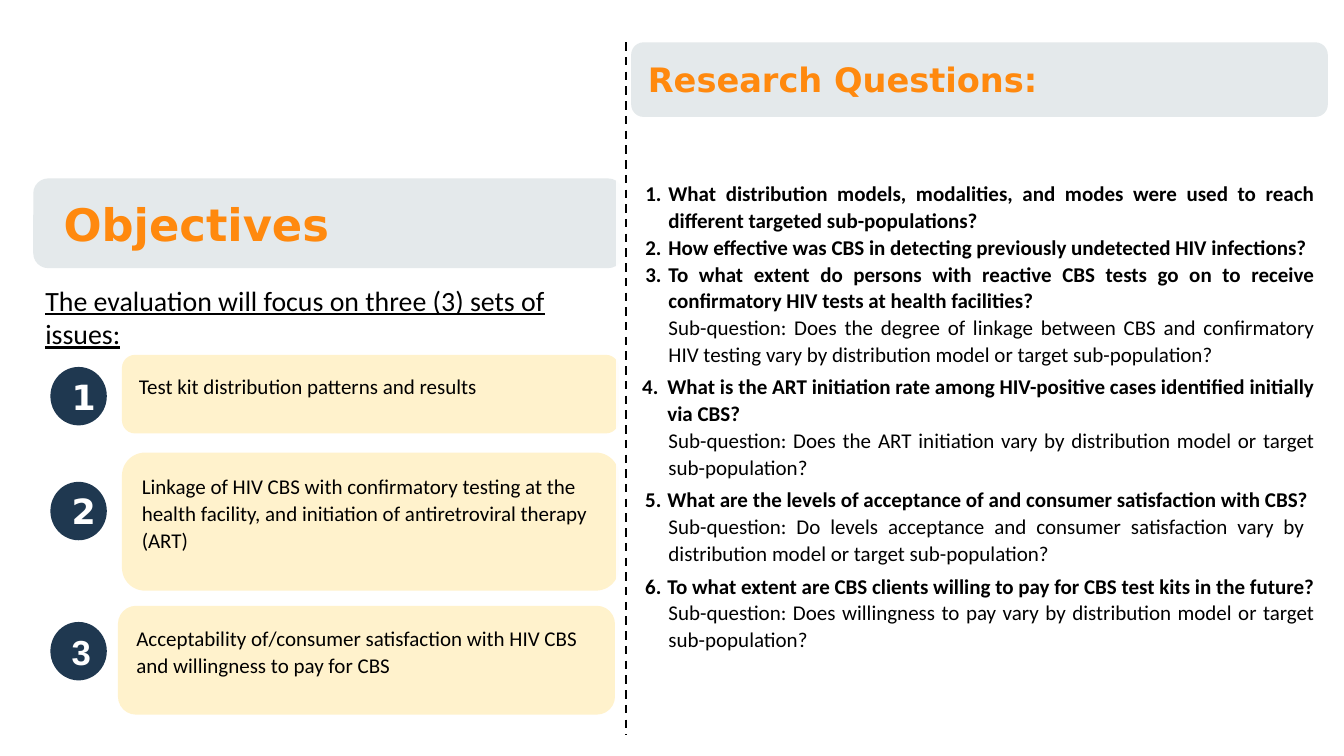
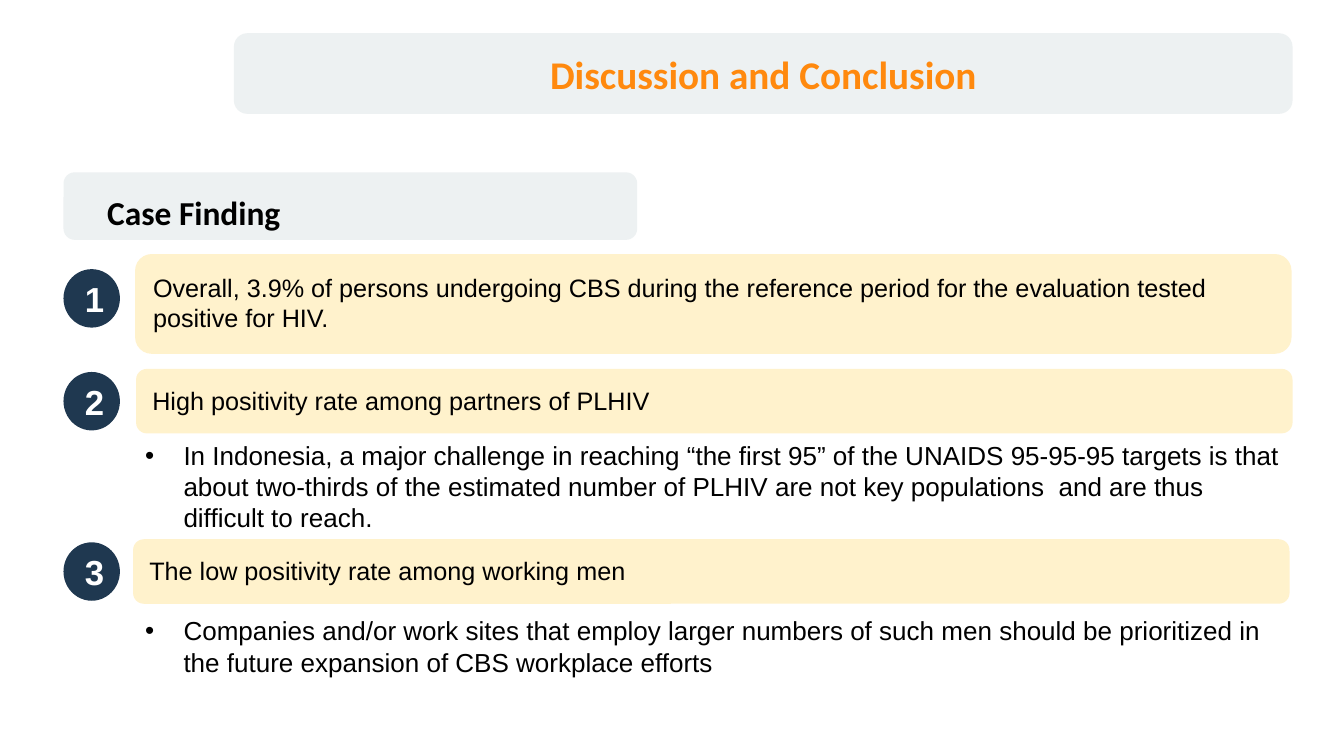
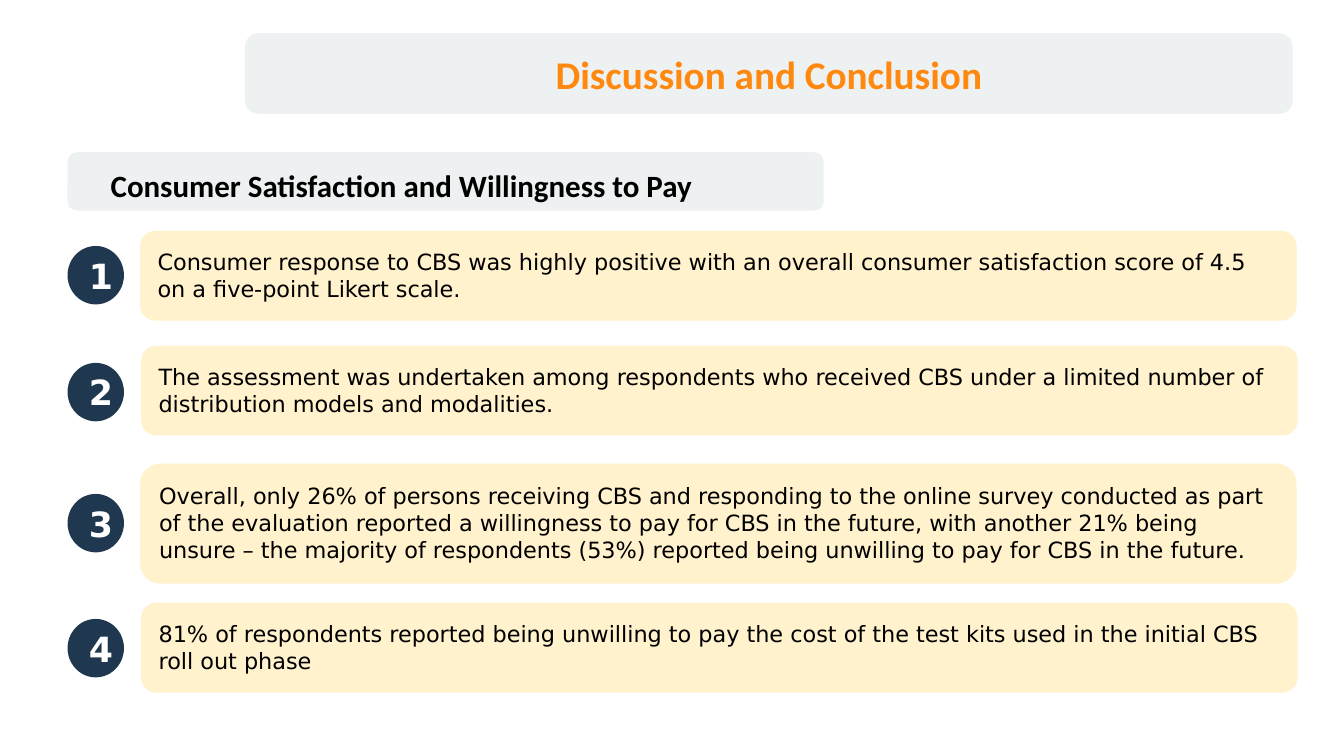
from lxml import etree
from pptx import Presentation
from pptx.dml.color import RGBColor
from pptx.enum.dml import MSO_LINE
from pptx.enum.shapes import MSO_CONNECTOR, MSO_SHAPE
from pptx.enum.text import MSO_ANCHOR, MSO_AUTO_SIZE, PP_ALIGN
from pptx.oxml.ns import qn
from pptx.util import Inches, Pt

ORANGE = RGBColor(0xFF, 0x89, 0x0E)
NAVY = RGBColor(0x1F, 0x38, 0x50)
CREAM = RGBColor(0xFF, 0xF2, 0xCC)
GREY = RGBColor(0xE4, 0xE9, 0xEB)
LIGHT_GREY = RGBColor(0xED, 0xF1, 0xF2)
WHITE = RGBColor(0xFF, 0xFF, 0xFF)
BLACK = RGBColor(0, 0, 0)

SANS = "DejaVu Sans"
CALIBRI = "Calibri"
ARIAL = "Arial"

LEFT, CENTER, JUSTIFY = PP_ALIGN.LEFT, PP_ALIGN.CENTER, PP_ALIGN.JUSTIFY
TOP, MIDDLE, BOTTOM = MSO_ANCHOR.TOP, MSO_ANCHOR.MIDDLE, MSO_ANCHOR.BOTTOM
ROUNDED, OVAL = MSO_SHAPE.ROUNDED_RECTANGLE, MSO_SHAPE.OVAL
STRAIGHT, DASH = MSO_CONNECTOR.STRAIGHT, MSO_LINE.DASH
NO_AUTOFIT = MSO_AUTO_SIZE.NONE

TITLE_ONLY, TITLE_AND_BODY, TITLE_AND_TWO_BODIES = 5, 1, 3
INSET = 0.13

QUESTIONS = [
    ("What distribution models, modalities, and modes were used to reach different targeted sub-populations?", None),
    ("How effective was CBS in detecting previously undetected HIV infections?", None),
    ("To what extent do persons with reactive CBS tests go on to receive confirmatory HIV tests at health facilities?",
     "Sub-question: Does the degree of linkage between CBS and confirmatory HIV testing vary by distribution model "
     "or target sub-population?"),
    ("What is the ART initiation rate among HIV-positive cases identified initially via CBS?",
     "Sub-question: Does the ART initiation vary by distribution model or target sub-population?"),
    ("What are the levels of acceptance of and consumer satisfaction with CBS?",
     "Sub-question: Do levels acceptance and consumer satisfaction vary by  distribution model or target "
     "sub-population?"),
    ("To what extent are CBS clients willing to pay for CBS test kits in the future?",
     "Sub-question: Does willingness to pay vary by distribution model or target sub-population?"),
]


def place(shape, box):
    """Move a shape to a box of left, top, width and height in inches."""
    shape.left, shape.top, shape.width, shape.height = map(Inches, box)


def set_frame(shape, anchor=TOP, inset=INSET, left_inset=None):
    """Set wrapping, anchor and margins, and return the text frame."""
    frame = shape.text_frame
    frame.word_wrap = True
    frame.auto_size = NO_AUTOFIT
    frame.vertical_anchor = anchor
    frame.margin_left = Inches(inset if left_inset is None else left_inset)
    frame.margin_right = frame.margin_top = frame.margin_bottom = Inches(inset)
    return frame


def set_list_mark(paragraph, bullet, number, indent):
    """Give a paragraph its indent and its bullet, number or no mark."""
    properties = paragraph._p.get_or_add_pPr()
    left, first = indent
    properties.set("marL", str(Inches(left)))
    properties.set("indent", str(Inches(first)))
    if not bullet and not number:
        etree.SubElement(properties, qn("a:buNone"))
        return
    color = etree.SubElement(properties, qn("a:buClr"))
    etree.SubElement(color, qn("a:srgbClr")).set("val", str(BLACK))
    etree.SubElement(properties, qn("a:buFont")).set("typeface", ARIAL if bullet else CALIBRI)
    if bullet:
        etree.SubElement(properties, qn("a:buChar")).set("char", bullet)
    else:
        mark = etree.SubElement(properties, qn("a:buAutoNum"))
        mark.set("type", "arabicPeriod")
        if number > 1:
            mark.set("startAt", str(number))


def write(frame, text, size=16, font=CALIBRI, color=BLACK, bold=False, underline=False, alignment=LEFT,
          line_spacing=1.0, space_before=0, bullet=None, number=None, indent=(0, 0)):
    """Write one formatted paragraph into a text frame."""
    paragraph = frame.paragraphs[0]
    if paragraph.runs:
        paragraph = frame.add_paragraph()
    set_list_mark(paragraph, bullet, number, indent)
    paragraph.alignment = alignment
    paragraph.line_spacing = line_spacing
    paragraph.space_before = Pt(space_before)
    paragraph.space_after = Pt(0)
    run = paragraph.add_run()
    run.text = text
    run.font.size = Pt(size)
    run.font.name = font
    run.font.bold = bold
    run.font.underline = underline
    run.font.color.rgb = color


def add_filled(slide, kind, box, fill):
    """Add a flat shape without an outline."""
    shape = slide.shapes.add_shape(kind, *map(Inches, box))
    shape.shadow.inherit = False
    shape.fill.solid()
    shape.fill.fore_color.rgb = fill
    shape.line.fill.background()
    return shape


def bring_to_front(slide, shape):
    """Put a shape above everything added so far."""
    slide.shapes._spTree.append(shape._element)


def add_title(slide, text, box, fill=LIGHT_GREY, left_inset=0.1, **text_format):
    """Set the slide title over a rounded band."""
    add_filled(slide, ROUNDED, box, fill)
    title = slide.shapes.title
    place(title, box)
    bring_to_front(slide, title)
    write(set_frame(title, MIDDLE, 0.1, left_inset), text, color=ORANGE, bold=True, **text_format)


def add_section_band(slide, text, box, size, line_spacing):
    """Add the rounded band that names a section."""
    band = add_filled(slide, ROUNDED, box, LIGHT_GREY)
    write(set_frame(band, BOTTOM, 0.04, 0.4), text, size=size, bold=True, line_spacing=line_spacing)


def add_number(slide, number, left, top, font):
    """Add a numbered circle."""
    circle = add_filled(slide, OVAL, (left, top, 0.56, 0.58), NAVY)
    write(set_frame(circle, MIDDLE), str(number), size=24.8, font=font, color=WHITE, bold=True, alignment=CENTER)


def add_card(slide, text, box, **text_format):
    """Add a rounded cream card with text."""
    write(set_frame(add_filled(slide, ROUNDED, box, CREAM)), text, **text_format)


def add_numbered_cards(slide, circle_left, cards, font, size):
    """Add full-width cards, each with its numbered circle."""
    for number, (circle_top, left, top, height, text) in enumerate(cards, 1):
        add_number(slide, number, circle_left, circle_top, font)
        add_card(slide, text, (left, top, 11.47, height), size=size, font=font)


def add_divider(slide, x, top, bottom):
    """Add a dashed vertical line."""
    line = slide.shapes.add_connector(STRAIGHT, *map(Inches, (x, top, x, bottom)))
    line.line.color.rgb = BLACK
    line.line.width = Pt(1.5)
    line.line.dash_style = DASH
    etree.SubElement(line._element.spPr, qn("a:effectLst"))


def fill_questions(slide):
    """Fill the body placeholder with the research questions."""
    body = slide.placeholders[1]
    place(body, (6.11, 1.65, 7.06, 5.55))
    body.fill.solid()
    body.fill.fore_color.rgb = WHITE
    color = body._element.spPr.find(qn("a:solidFill"))[0]
    etree.SubElement(color, qn("a:alpha")).set("val", "92000")
    bring_to_front(slide, body)
    frame = set_frame(body)
    for number, (question, sub_question) in enumerate(QUESTIONS, 1):
        restarts = number > 3
        hanging = -0.25 if number == 4 else -0.22
        write(frame, question, size=15, bold=True, alignment=JUSTIFY, line_spacing=1.06,
              space_before=4 if restarts else 0, number=number if restarts else 1,
              indent=(0.38, hanging) if restarts else (0.39, -0.23))
        if sub_question:
            write(frame, sub_question, size=15, alignment=JUSTIFY, line_spacing=1.07, indent=(0.39, 0))


def build_objectives(presentation):
    """Build the slide of objectives and research questions."""
    slide = presentation.slides.add_slide(presentation.slide_layouts[TITLE_AND_BODY])
    add_title(slide, "Objectives", (0.33, 1.77, 5.85, 0.89), fill=GREY, left_inset=0.3, size=32, font=SANS)
    band = add_filled(slide, ROUNDED, (6.26, 0.42, 6.91, 0.74), GREY)
    write(set_frame(band), "Research Questions:", size=24, font=SANS, color=ORANGE, bold=True)
    intro = slide.shapes.add_textbox(*map(Inches, (0.32, 2.68, 5.93, 0.94)))
    write(set_frame(intro), "The evaluation will focus on three (3) sets of issues:", size=19.9, underline=True)
    cards = [
        (3.64, SANS, (1.21, 3.52, 4.93, 0.78), "Test kit distribution patterns and results"),
        (4.78, SANS, (1.21, 4.49, 4.93, 1.37),
         "Linkage of HIV CBS with confirmatory testing at the health facility, and initiation of antiretroviral "
         "therapy (ART)"),
        (6.17, ARIAL, (1.17, 6.01, 4.93, 1.08),
         "Acceptability of/consumer satisfaction with HIV CBS and willingness to pay for CBS"),
    ]
    for number, (circle_top, font, box, text) in enumerate(cards, 1):
        add_number(slide, number, 0.5, circle_top, font)
        add_card(slide, text, box, size=15, line_spacing=1.06)
    fill_questions(slide)
    add_divider(slide, 6.21, 0.42, 7.29)


def build_case_finding(presentation):
    """Build the slide on case finding."""
    slide = presentation.slides.add_slide(presentation.slide_layouts[TITLE_AND_TWO_BODIES])
    add_title(slide, "Discussion and Conclusion", (2.32, 0.33, 10.5, 0.8), size=28, alignment=CENTER)
    add_section_band(slide, "Case Finding", (0.63, 1.71, 5.69, 0.67), 23.9, 0.9)
    add_numbered_cards(slide, 0.63, [
        (2.67, 1.34, 2.52, 0.99,
         "Overall, 3.9% of persons undergoing CBS during the reference period for the evaluation tested positive "
         "for HIV."),
        (3.69, 1.35, 3.66, 0.64, "High positivity rate among partners of PLHIV"),
        (5.38, 1.32, 5.35, 0.64, "The low positivity rate among working men"),
    ], ARIAL, 18)
    notes = [
        (4.31, 1.04,
         "In Indonesia, a major challenge in reaching “the first 95” of the UNAIDS 95-95-95 targets is that about "
         "two-thirds of the estimated number of PLHIV are not key populations  and are thus difficult to reach."),
        (6.05, 0.73,
         "Companies and/or work sites that employ larger numbers of such men should be prioritized in the future "
         "expansion of CBS workplace efforts"),
    ]
    for index, (top, height, text) in enumerate(notes, 1):
        body = slide.placeholders[index]
        place(body, (1.34, top, 11.44, height))
        bring_to_front(slide, body)
        write(set_frame(body, inset=0.05, left_inset=0.1), text, size=18.6, font=ARIAL, bullet="•",
              indent=(0.38, -0.38))


def build_satisfaction(presentation):
    """Build the slide on satisfaction and willingness to pay."""
    slide = presentation.slides.add_slide(presentation.slide_layouts[TITLE_ONLY])
    add_title(slide, "Discussion and Conclusion", (2.43, 0.33, 10.39, 0.8), size=28, alignment=CENTER)
    add_section_band(slide, "Consumer Satisfaction and Willingness to Pay", (0.67, 1.51, 7.5, 0.58), 22.1, 0.8)
    add_numbered_cards(slide, 0.67, [
        (2.44, 1.39, 2.29, 0.89,
         "Consumer response to CBS was highly positive with an overall consumer satisfaction score of 4.5 on a "
         "five-point Likert scale."),
        (3.6, 1.4, 3.43, 0.89,
         "The assessment was undertaken among respondents who received CBS under a limited number of distribution "
         "models and modalities."),
        (4.9, 1.39, 4.6, 1.19,
         "Overall, only 26% of persons receiving CBS and responding to the online survey conducted as part of the "
         "evaluation reported a willingness to pay for CBS in the future, with another 21% being unsure – the "
         "majority of respondents (53%) reported being unwilling to pay for CBS in the future."),
        (6.14, 1.4, 5.98, 0.89,
         "81% of respondents reported being unwilling to pay the cost of the test kits used in the initial CBS "
         "roll out phase"),
    ], SANS, 16)


def main():
    """Build and save the presentation."""
    presentation = Presentation()
    presentation.slide_width = Inches(13.33)
    presentation.slide_height = Inches(7.5)
    build_objectives(presentation)
    build_case_finding(presentation)
    build_satisfaction(presentation)
    presentation.save("out.pptx")


if __name__ == "__main__":
    main()
